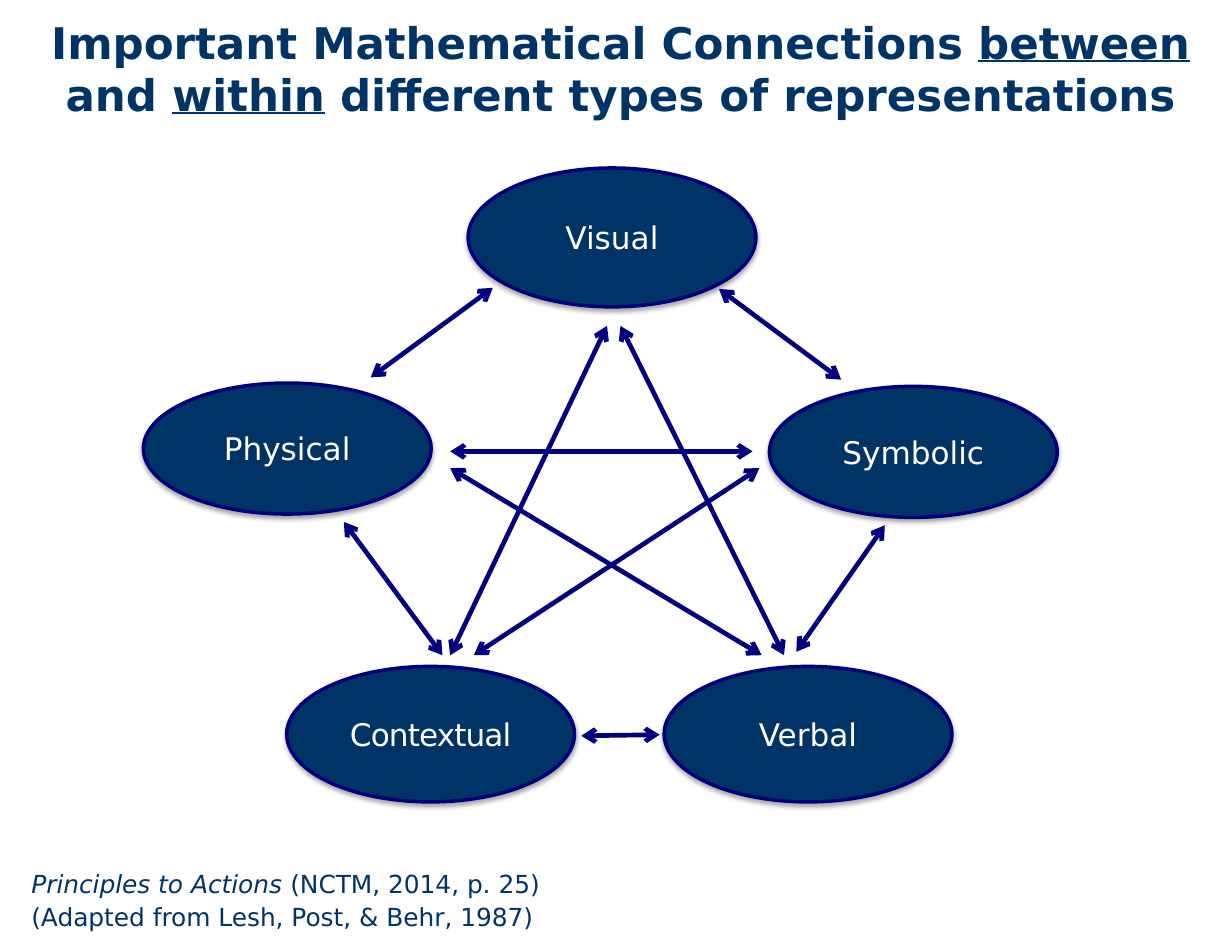
from lxml import etree
from pptx import Presentation
from pptx.dml.color import RGBColor
from pptx.enum import shapes, text
from pptx.oxml import parse_xml
from pptx.oxml.ns import nsdecls, qn
from pptx.util import Inches, Pt

FONT = "DejaVu Sans"
NAVY, OUTLINE, ARROW, WHITE = "003366", "00007D", "000080", "FFFFFF"
SHADOW = (
    f'<a:outerShdw {nsdecls("a")} blurRad="40000" dist="23000" dir="5400000" rotWithShape="0">'
    '<a:srgbClr val="000000"><a:alpha val="35000"/></a:srgbClr></a:outerShdw>'
)


def color(value):
    return RGBColor.from_string(value)


def add_span(para, words, size, shade, **styles):
    span = para.add_run()
    span.text = words
    span.font.name = FONT
    span.font.size = Pt(size)
    span.font.color.rgb = color(shade)
    for style, value in styles.items():
        setattr(span.font, style, value)
    return span


deck = Presentation()
deck.slide_width, deck.slide_height = Inches(11), Inches(8.5)
page = deck.slides.add_slide(deck.slide_layouts[5])

# Representation ellipses: left, top, height
ellipses = {
    "Contextual": (2.56, 5.95, 1.21),
    "Physical": (1.28, 3.42, 1.17),
    "Visual": (4.18, 1.5, 1.24),
    "Symbolic": (6.87, 3.45, 1.17),
    "Verbal": (5.93, 5.95, 1.21),
}
for name, (left, top, height) in ellipses.items():
    oval = page.shapes.add_shape(
        shapes.MSO_SHAPE.OVAL, Inches(left), Inches(top), Inches(2.57), Inches(height))
    oval.fill.solid()
    oval.fill.fore_color.rgb = color(NAVY)
    oval.line.color.rgb = color(OUTLINE)
    oval.line.width = Pt(2.25)
    oval.shadow.inherit = False
    oval._element.spPr.find(qn("a:effectLst")).append(parse_xml(SHADOW))
    frame = oval.text_frame
    frame.margin_left = frame.margin_right = frame.margin_top = frame.margin_bottom = 0
    frame.vertical_anchor = text.MSO_ANCHOR.MIDDLE
    para = frame.paragraphs[0]
    para.alignment = text.PP_ALIGN.CENTER
    span = add_span(para, name, 20, WHITE)
    if name == "Contextual":
        span._r.get_or_add_rPr().set("spc", "-60")

# Two-headed arrows: start x, start y, end x, end y
arrows = [
    (4.02, 4.03, 6.72, 4.03),  # Physical - Symbolic
    (3.31, 3.37, 4.4, 2.57),   # Physical - Visual
    (7.11, 5.82, 7.9, 4.69),   # Verbal - Symbolic
    (5.19, 6.57, 5.89, 6.56),  # Contextual - Verbal
    (7, 5.85, 5.54, 2.91),     # Verbal - Visual
    (4.23, 5.85, 6.78, 4.18),  # Contextual - Symbolic
    (4.02, 5.85, 5.42, 2.91),  # Contextual - Visual
    (6.8, 5.85, 4.02, 4.18),   # Verbal - Physical
    (7.51, 3.39, 6.42, 2.58),  # Symbolic - Visual
    (3.95, 5.85, 3.07, 4.66),  # Contextual - Physical
]
for ends in arrows:
    arrow = page.shapes.add_connector(
        shapes.MSO_CONNECTOR.STRAIGHT, *(Inches(value) for value in ends))
    arrow.line.color.rgb = color(ARROW)
    arrow.line.width = Pt(3)
    line = arrow.line._get_or_add_ln()
    for end in ("a:headEnd", "a:tailEnd"):
        etree.SubElement(line, qn(end), type="arrow")
    etree.SubElement(arrow._element.spPr, qn("a:effectLst"))

# Title and source note
title = page.shapes.title
title.left, title.top, title.width, title.height = (
    Inches(value) for value in (0.25, 0.08, 10.58, 1.05))
note = page.shapes.add_textbox(Inches(0.17), Inches(7.67), Inches(5.42), Inches(0.68))
for box in (title, note):
    frame = box.text_frame
    frame.word_wrap = True
    frame.auto_size = text.MSO_AUTO_SIZE.SHAPE_TO_FIT_TEXT
    frame.vertical_anchor = text.MSO_ANCHOR.TOP
    frame.margin_left = frame.margin_right = Inches(0.11)
    frame.margin_top = frame.margin_bottom = Inches(0.06)

para = title.text_frame.paragraphs[0]
para.alignment = text.PP_ALIGN.CENTER
for words, underlined in [
    ("Important Mathematical Connections ", False),
    ("between", True),
    (" and ", False),
    ("within", True),
    (" different types of representations", False),
]:
    add_span(para, words, 28, NAVY, bold=True, underline=underlined)

para = note.text_frame.paragraphs[0]
add_span(para, "Principles to Actions", 16, NAVY, italic=True)
add_span(para, " (NCTM, 2014, p. 25)", 16, NAVY)
add_span(note.text_frame.add_paragraph(), "(Adapted from Lesh, Post, & Behr, 1987)", 16, NAVY)
for para in note.text_frame.paragraphs:
    para.line_spacing = 1.1

deck.save("out.pptx")
